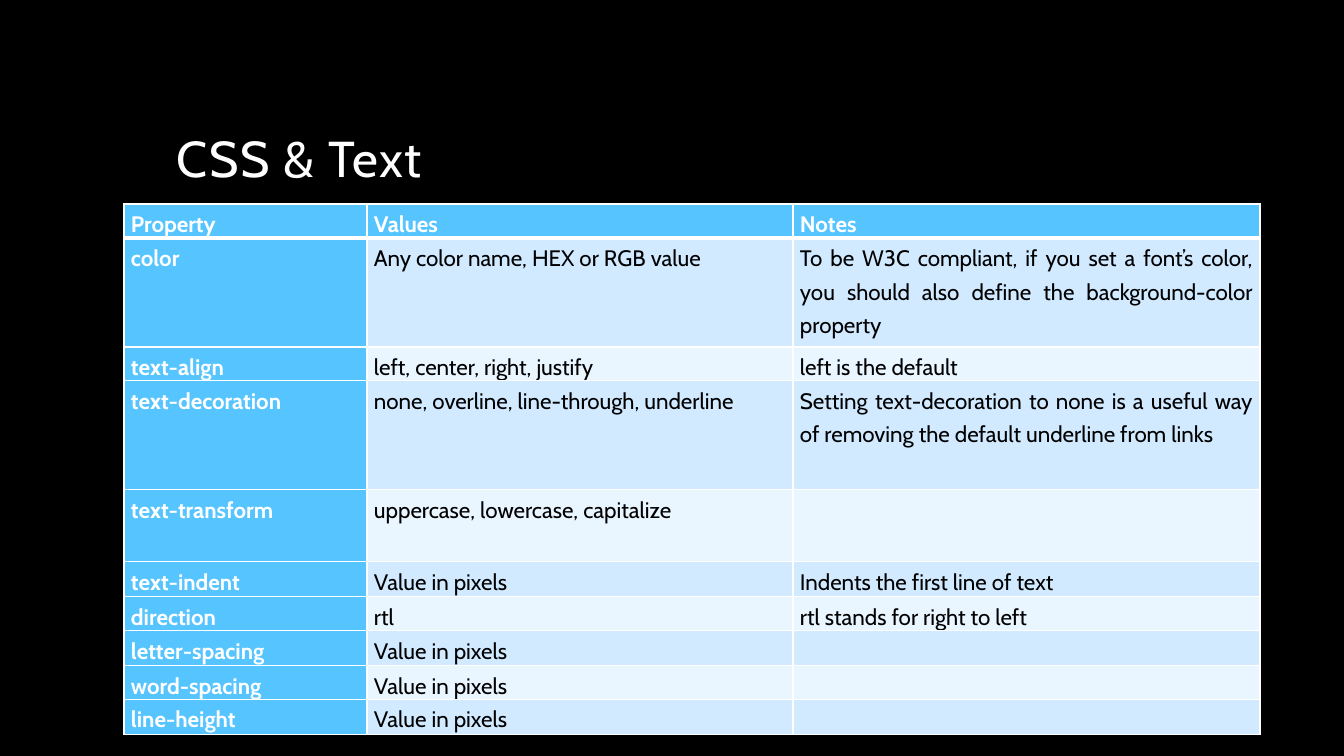
from lxml import etree
from pptx import Presentation
from pptx.dml.color import RGBColor
from pptx.enum.text import MSO_ANCHOR, PP_ALIGN
from pptx.oxml.ns import qn
from pptx.util import Emu, Pt

EMU_PER_PX = 914400 / 100.8
BOTTOM = MSO_ANCHOR.BOTTOM
JUSTIFY = PP_ALIGN.JUSTIFY
FONT = "Cabin"
BLACK = RGBColor(0x00, 0x00, 0x00)
WHITE = RGBColor(0xFF, 0xFF, 0xFF)
HEADER_BLUE = RGBColor(0x56, 0xC5, 0xFF)
BAND_DARK = RGBColor(0xD1, 0xEA, 0xFF)
BAND_LIGHT = RGBColor(0xE9, 0xF5, 0xFF)

COLUMN_WIDTHS = [243, 426, 467]
ROWS = [
    (34, "Property", "Values", "Notes"),
    (109, "color", "Any color name, HEX or RGB value",
     "To be W3C compliant, if you set a font’s color, you should also define "
     "the background-color property"),
    (34, "text-align", "left, center, right, justify", "left is the default"),
    (109, "text-decoration", "none, overline, line-through, underline",
     "Setting text-decoration to none is a useful way of removing the default "
     "underline from links"),
    (72, "text-transform", "uppercase, lowercase, capitalize", ""),
    (35, "text-indent", "Value in pixels", "Indents the first line of text"),
    (34, "direction", "rtl", "rtl stands for right to left"),
    (35, "letter-spacing", "Value in pixels", ""),
    (34, "word-spacing", "Value in pixels", ""),
    (35, "line-height", "Value in pixels", ""),
]


def px(length):
    return Emu(round(length * EMU_PER_PX))


def format_paragraph(paragraph, size, color, line_spacing, bold=False):
    paragraph.line_spacing = line_spacing
    for run in paragraph.runs:
        run.font.name = FONT
        run.font.size = Pt(size)
        run.font.bold = bold
        run.font.color.rgb = color


def add_title(slide, text):
    shape = slide.shapes.add_textbox(px(167), px(42), px(1008), px(151))
    text_frame = shape.text_frame
    text_frame.word_wrap = True
    text_frame.vertical_anchor = BOTTOM
    text_frame.text = text
    paragraph = text_frame.paragraphs[0]
    format_paragraph(paragraph, 36, WHITE, 0.9)
    paragraph.runs[0].font._element.set("spc", "100")


def add_border(cell, side, width):
    properties = cell._tc.get_or_add_tcPr()
    line = etree.SubElement(properties, qn(f"a:ln{side}"), w=str(Pt(width)))
    fill = etree.SubElement(line, qn("a:solidFill"))
    etree.SubElement(fill, qn("a:srgbClr"), val=str(WHITE))


def format_cell(cell, text, row_index, column_index):
    is_header = row_index == 0 or column_index == 0
    cell.margin_left = cell.margin_right = px(7)
    cell.margin_top = cell.margin_bottom = 0
    for side in "LRTB":
        under_header = (row_index, side) in ((0, "B"), (1, "T"))
        add_border(cell, side, 3 if under_header else 1)
    cell.fill.solid()
    band = BAND_DARK if row_index % 2 else BAND_LIGHT
    cell.fill.fore_color.rgb = HEADER_BLUE if is_header else band
    if text:
        cell.text_frame.text = text
        paragraph = cell.text_frame.paragraphs[0]
        paragraph.alignment = JUSTIFY
        format_paragraph(paragraph, 16, WHITE if is_header else BLACK, 1.25, is_header)


def add_property_table(slide):
    height = sum(row[0] for row in ROWS)
    table = slide.shapes.add_table(
        len(ROWS), len(COLUMN_WIDTHS),
        px(124), px(204), px(sum(COLUMN_WIDTHS)), px(height)).table
    table.horz_banding = False
    table.first_row = False
    for column, width in zip(table.columns, COLUMN_WIDTHS):
        column.width = px(width)
    for row_index, (row_height, *texts) in enumerate(ROWS):
        table.rows[row_index].height = px(row_height)
        for column_index, text in enumerate(texts):
            cell = table.cell(row_index, column_index)
            format_cell(cell, text, row_index, column_index)


def main():
    presentation = Presentation()
    presentation.slide_width = px(1344)
    presentation.slide_height = px(756)
    slide = presentation.slides.add_slide(presentation.slide_layouts[6])
    slide.background.fill.solid()
    slide.background.fill.fore_color.rgb = BLACK
    add_title(slide, "CSS & Text")
    add_property_table(slide)
    presentation.save("out.pptx")


if __name__ == "__main__":
    main()
